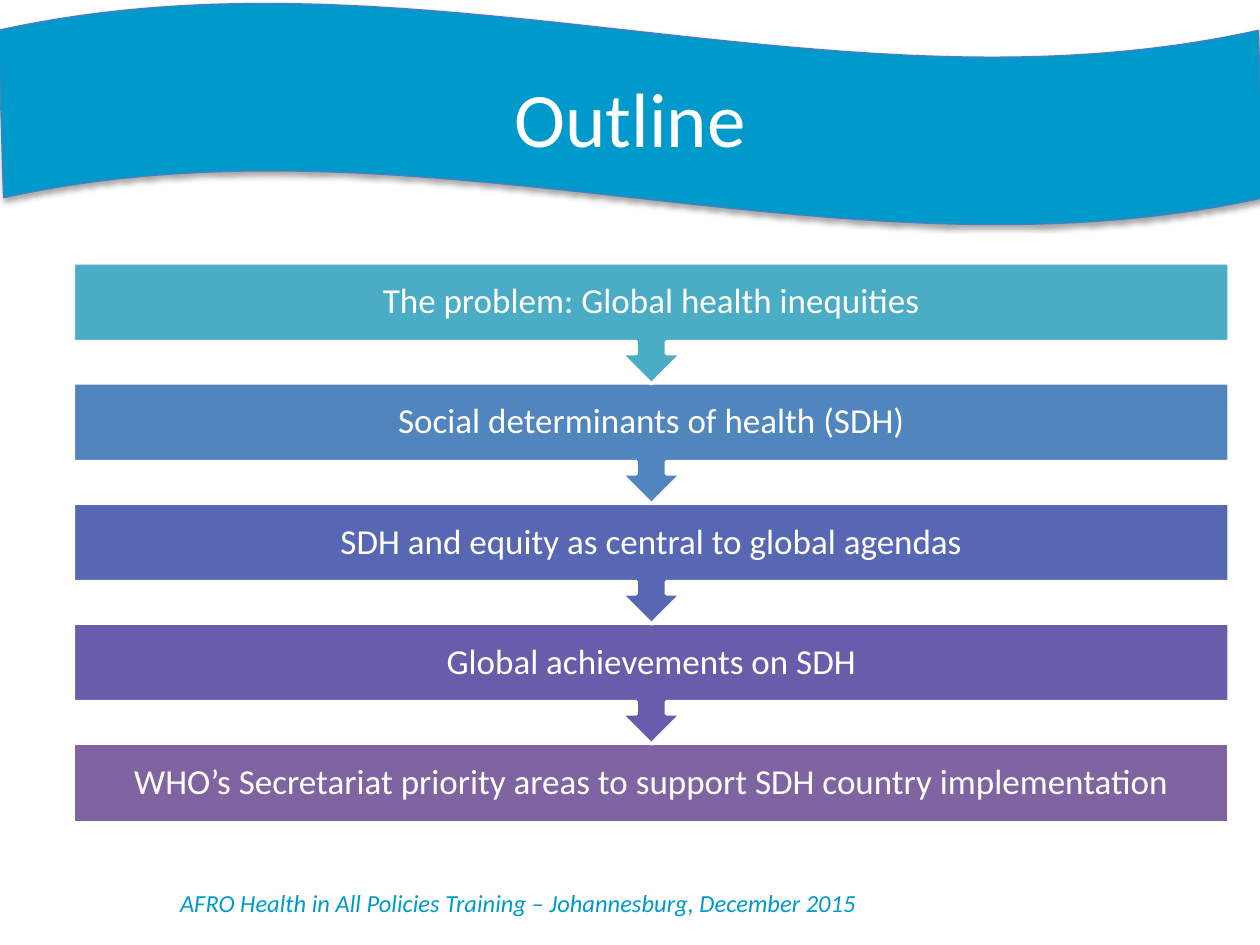
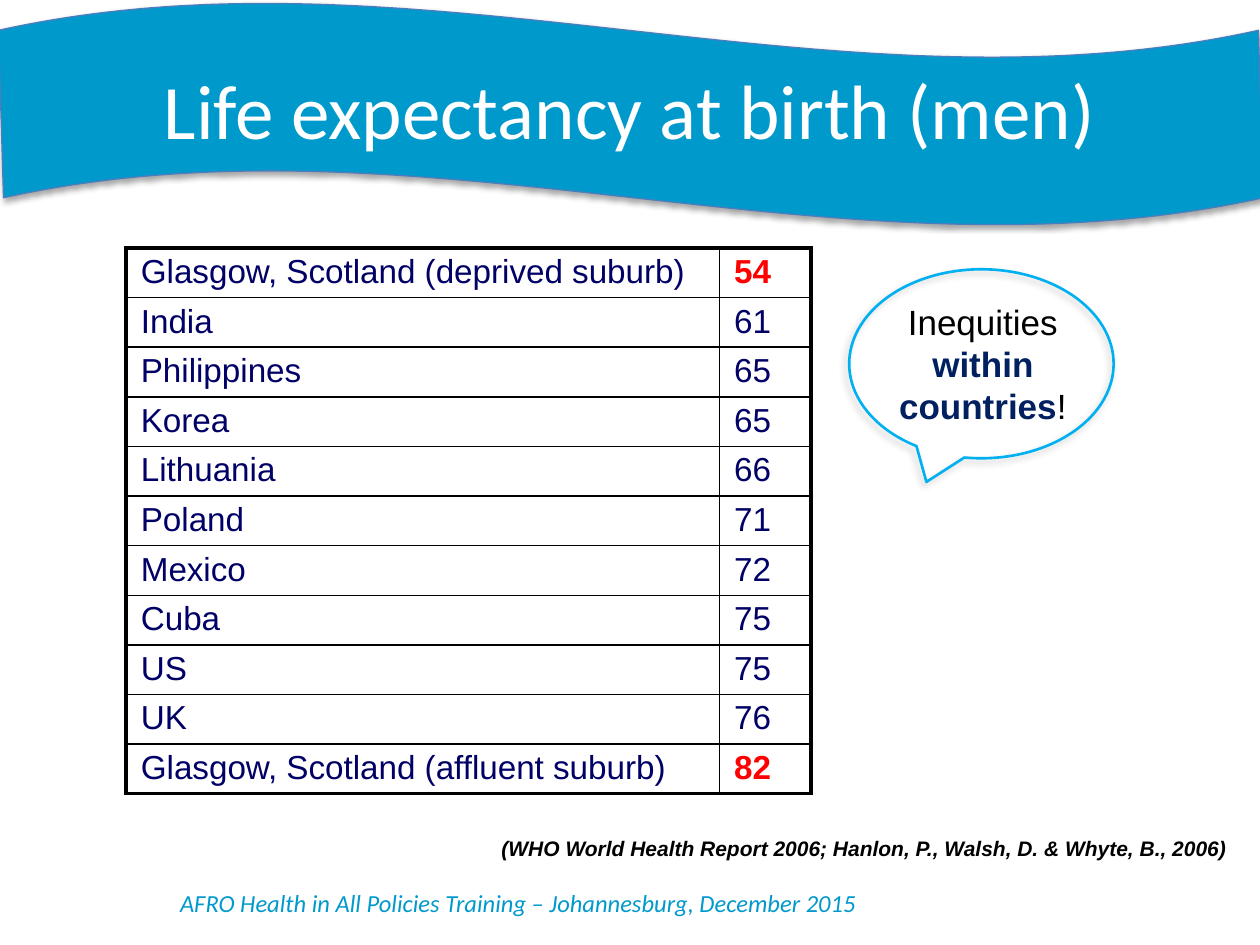
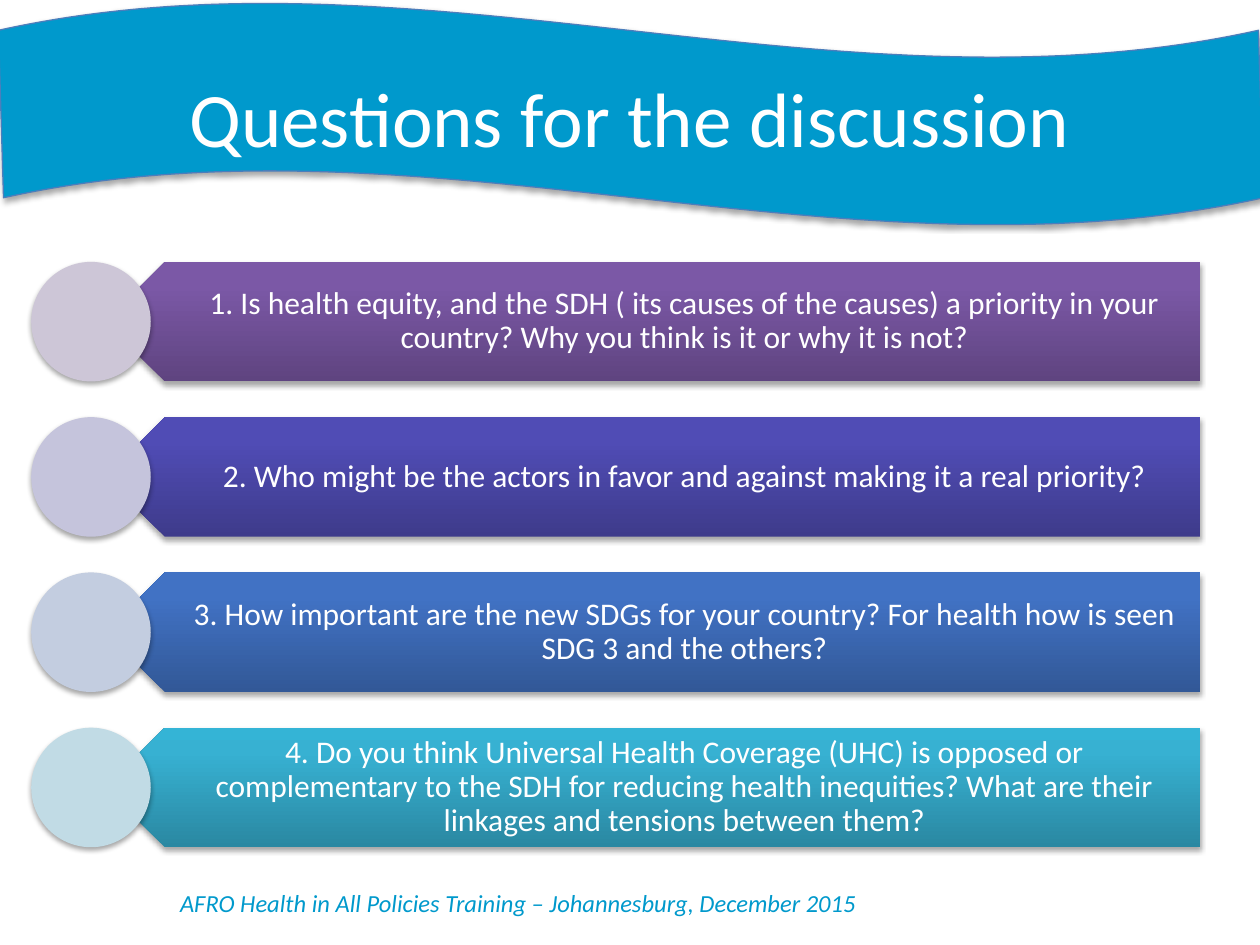
from copy import deepcopy

from lxml.etree import SubElement
from pptx import Presentation
from pptx.dml.color import RGBColor
from pptx.enum.shapes import MSO_SHAPE
from pptx.enum.text import MSO_ANCHOR, MSO_AUTO_SIZE, PP_ALIGN
from pptx.oxml.ns import qn
from pptx.util import Cm, Pt

WHITE, BLACK, BAND_BLUE, NAVY, RED = "FFFFFF", "000000", "0099CC", "000066", "FF0000"
SOFT_SHADOW = {"tint": "000000", "alpha": 35, "blur": 3.1, "distance": 1.8, "angle": 90}
BUBBLE_SHADOW = {"tint": "808080", "alpha": 40, "blur": 4, "distance": 3, "angle": 135}
TITLE_FONT = {"name": "Calibri", "size": Pt(44), "color": WHITE}
FOOTER_FONT = {"name": "Calibri", "size": Pt(14), "italic": True, "color": BAND_BLUE}
STEP_FONT = {"name": "Calibri", "size": Pt(20), "color": WHITE}
QUESTION_FONT = {"name": "Calibri", "size": Pt(18), "color": WHITE}
TABLE_FONT = {"name": "Arial", "size": Pt(19), "color": NAVY}
EXTREME_FONT = {**TABLE_FONT, "bold": True, "color": RED}
SOURCE_FONT = {"name": "Arial", "size": Pt(12), "bold": True, "italic": True, "color": BLACK}
BUBBLE_FONT = {"name": "Arial", "size": Pt(20), "color": BLACK}
STRESS_FONT = {**BUBBLE_FONT, "bold": True, "color": "002060"}

FOOTER = "AFRO Health in All Policies Training – Johannesburg, December 2015"
STEPS = [
    ("The problem: Global health inequities", "4BACC6"),
    ("Social determinants of health (SDH)", "5185BD"),
    ("SDH and equity as central to global agendas", "5767B4"),
    ("Global achievements on SDH", "685DAB"),
    ("WHO’s Secretariat priority areas to support SDH country implementation", "8064A2"),
]
LIFE_EXPECTANCY = [
    ("Glasgow, Scotland (deprived suburb)", 54),
    ("India", 61),
    ("Philippines", 65),
    ("Korea", 65),
    ("Lithuania", 66),
    ("Poland", 71),
    ("Mexico", 72),
    ("Cuba", 75),
    ("US", 75),
    ("UK", 76),
    ("Glasgow, Scotland (affluent suburb)", 82),
]
QUESTIONS = [
    ("1. Is health equity, and the SDH ( its causes of the causes) a priority in your country? "
     "Why you think is it or why it is not?", ("5F4480", "7B58A6", "7C57A8"), "CDC6D7"),
    ("2. Who might be the actors in favor and against making it a real priority?",
     ("3E3B8B", "504CB5", "4F4BB8"), "C5C4DC"),
    ("3. How important are the new SDGs for your country? For health how is seen SDG 3 "
     "and the others?", ("325897", "4172C4", "3F72C7"), "C3CDE0"),
    ("4. Do you think Universal Health Coverage (UHC) is opposed or complementary to the SDH "
     "for reducing health inequities? What are their linkages and tensions between them?",
     ("2A88A2", "37B1D2", "34B4D6"), "C1DBE5"),
]


def rgb(value):
    """Turn a hex string into a colour."""
    return RGBColor.from_string(value)


def set_values(target, values):
    """Set each named attribute of the target."""
    for name, value in values.items():
        if name == "color":
            target.color.rgb = rgb(value)
        else:
            setattr(target, name, value)


def write_spans(frame, spans, align=PP_ALIGN.CENTER, line_spacing=None):
    """Write one paragraph of (text, font) spans into a text frame."""
    para = frame.paragraphs[0]
    set_values(para, {"alignment": align, "line_spacing": line_spacing})
    for text, font in spans:
        span = para.add_run()
        span.text = text
        set_values(span.font, font)


def add_text(slide, place, spans, align=PP_ALIGN.CENTER, line_spacing=None, **frame_values):
    """Add a wrapping text box at a place given in centimetres."""
    box = slide.shapes.add_textbox(*map(Cm, place))
    set_values(box.text_frame, {"word_wrap": True, **frame_values})
    write_spans(box.text_frame, spans, align, line_spacing)
    return box


def add_figure(slide, kind, place, fill=None, line=None, shadow=None, rotation=0):
    """Add a preset shape with its fill, (colour, points) line and shadow."""
    figure = slide.shapes.add_shape(kind, *map(Cm, place))
    figure.rotation = rotation
    figure.shadow.inherit = False
    if fill:
        figure.fill.solid()
        figure.fill.fore_color.rgb = rgb(fill)
    else:
        figure.fill.background()
    if line:
        set_values(figure.line, {"color": line[0], "width": Pt(line[1])})
    else:
        figure.line.fill.background()
    if shadow:
        cast_shadow(figure, **shadow)
    return figure


def cast_shadow(figure, tint, alpha, blur, distance, angle):
    """Give a figure an outer shadow."""
    effects = figure.element.spPr.find(qn("a:effectLst"))
    outer = SubElement(effects, qn("a:outerShdw"), blurRad=str(Pt(blur)), dist=str(Pt(distance)),
                       dir=str(angle * 60000), rotWithShape="0")
    color = SubElement(outer, qn("a:srgbClr"), val=tint)
    SubElement(color, qn("a:alpha"), val=str(alpha * 1000))


def fill_gradient(figure, colors):
    """Fill a figure from bottom to top with three colours."""
    figure.fill.gradient()
    figure.fill.gradient_angle = 90
    gradient = figure.element.spPr.find(qn("a:gradFill"))
    gradient.set("rotWithShape", "0")
    stop_list = gradient.find(qn("a:gsLst"))
    stop_list.append(deepcopy(stop_list[-1]))
    for stop, position, color in zip(figure.fill.gradient_stops, (0, 0.8, 1), colors):
        stop.position = position
        stop.color.rgb = rgb(color)


def dress_layout(layout, slide):
    """Draw the wave band and the footer once and move them to the layout."""
    band = add_figure(slide, MSO_SHAPE.WAVE, (-0.03, 0.05, 25.5, 4.5), BAND_BLUE,
                      ("4B7EBC", 0.75), SOFT_SHADOW)
    band.adjustments[0], band.adjustments[1] = 0.125, 0.002
    footer = add_text(slide, (0.2, 17.78, 20.5, 0.86), [(FOOTER, FOOTER_FONT)],
                      auto_size=MSO_AUTO_SIZE.SHAPE_TO_FIT_TEXT)
    for shape in (footer, band):
        layout.shapes.element.append(shape.element)


def set_title(slide, text, place=(1.27, 0.76, 22.86, 3.18)):
    """Place and format the slide title."""
    title = slide.shapes.title
    left, top, width, height = map(Cm, place)
    set_values(title, {"left": left, "top": top, "width": width, "height": height})
    set_values(title.text_frame, {"vertical_anchor": MSO_ANCHOR.MIDDLE,
                                  "auto_size": MSO_AUTO_SIZE.NONE})
    write_spans(title.text_frame, [(text, TITLE_FONT)])


def add_steps(slide):
    """Stack the outline steps, the last one lowest and at the back."""
    left, first_top, width, pitch, text_height = 1.48, 5.3, 23.3, 2.42, 1.6
    margins = dict.fromkeys(("margin_left", "margin_right", "margin_top", "margin_bottom"), Cm(0.4))
    last = len(STEPS) - 1
    for index, (text, color) in reversed(list(enumerate(STEPS))):
        top = first_top + index * pitch
        text_place = (left, top, width, text_height)
        if index == last:
            add_figure(slide, MSO_SHAPE.RECTANGLE, text_place, color, (WHITE, 2))
        else:
            add_figure(slide, MSO_SHAPE.UP_ARROW_CALLOUT, (left, top, width, 2.44), color,
                       (WHITE, 2), rotation=180)
        add_text(slide, text_place, [(text, STEP_FONT)], line_spacing=0.9,
                 vertical_anchor=MSO_ANCHOR.MIDDLE, **margins)


def set_borders(cell, widths):
    """Draw the black borders of a cell from widths by side."""
    properties = cell._tc.get_or_add_tcPr()
    for side, width in widths.items():
        border = SubElement(properties, qn(f"a:ln{side}"), w=str(Pt(width)))
        SubElement(SubElement(border, qn("a:solidFill")), qn("a:srgbClr"), val=BLACK)


def add_life_table(slide):
    """Add the life expectancy table with a thick outer frame."""
    last = len(LIFE_EXPECTANCY) - 1
    columns = (11.96, 1.85)
    place = map(Cm, (2.54, 5, sum(columns), last + 1))
    table = slide.shapes.add_table(last + 1, 2, *place).table
    set_values(table, {"first_row": False, "horz_banding": False})
    for column, width in zip(table.columns, columns):
        column.width = Cm(width)
    for row, record in enumerate(LIFE_EXPECTANCY):
        for column, value in enumerate(record):
            cell = table.cell(row, column)
            set_values(cell, {"margin_left": Cm(0.3), "margin_right": Cm(0.3),
                              "margin_top": Cm(0.11), "margin_bottom": Cm(0.11)})
            outer = {"L": column == 0, "R": column == 1, "T": row == 0, "B": row == last}
            set_borders(cell, {side: 2.25 if edge else 1 for side, edge in outer.items()})
            cell.fill.background()
            extreme = column == 1 and row in (0, last)
            write_spans(cell.text_frame, [(str(value), EXTREME_FONT if extreme else TABLE_FONT)],
                        PP_ALIGN.LEFT)


def add_bubble(slide):
    """Add the speech bubble and its message."""
    bubble = add_figure(slide, MSO_SHAPE.OVAL_CALLOUT, (17.12, 5.43, 5.33, 3.81),
                        line=("00B0F0", 1.5), shadow=BUBBLE_SHADOW)
    bubble.adjustments[0], bubble.adjustments[1] = -0.208, 0.625
    spans = [("Inequities ", BUBBLE_FONT), ("within countries", STRESS_FONT), ("!", BUBBLE_FONT)]
    add_text(slide, (17.15, 5.94, 5.33, 2.82), spans, auto_size=MSO_AUTO_SIZE.SHAPE_TO_FIT_TEXT)


def add_questions(slide):
    """Add the rows of question arrows with their circles."""
    height, pitch = 2.41, 3.13
    for index, (text, gradient, circle_color) in enumerate(QUESTIONS):
        top = 5.28 + index * pitch
        plate = add_figure(slide, MSO_SHAPE.PENTAGON, (2.12, top, 22.07, height),
                           shadow=SOFT_SHADOW, rotation=180)
        fill_gradient(plate, gradient)
        add_text(slide, (2.71, top, 21.48, height), [(text, QUESTION_FONT)], line_spacing=0.9,
                 vertical_anchor=MSO_ANCHOR.MIDDLE, margin_left=Cm(1.06), margin_right=Cm(0.36),
                 margin_top=Cm(0.18), margin_bottom=Cm(0.18))
        add_figure(slide, MSO_SHAPE.OVAL, (0.63, top, height, height), circle_color,
                   shadow=SOFT_SHADOW)


def main():
    """Build the deck and save it."""
    deck = Presentation()
    deck.slide_width, deck.slide_height = Cm(25.4), Cm(19.05)
    layout = deck.slide_layouts[5]
    outline, life, discussion = [deck.slides.add_slide(layout) for _ in range(3)]
    dress_layout(layout, outline)

    set_title(outline, "Outline")
    add_steps(outline)

    set_title(life, "Life expectancy at birth (men)", (0, 0.48, 25.4, 3.43))
    add_life_table(life)
    add_text(life, (9.86, 16.71, 15.54, 0.76),
             [("(WHO World Health Report 2006; Hanlon, P., Walsh, D. & Whyte, B., 2006)", SOURCE_FONT)],
             PP_ALIGN.LEFT, auto_size=MSO_AUTO_SIZE.SHAPE_TO_FIT_TEXT)
    add_bubble(life)

    set_title(discussion, "Questions for the discussion")
    add_questions(discussion)
    deck.save("out.pptx")


if __name__ == "__main__":
    main()
